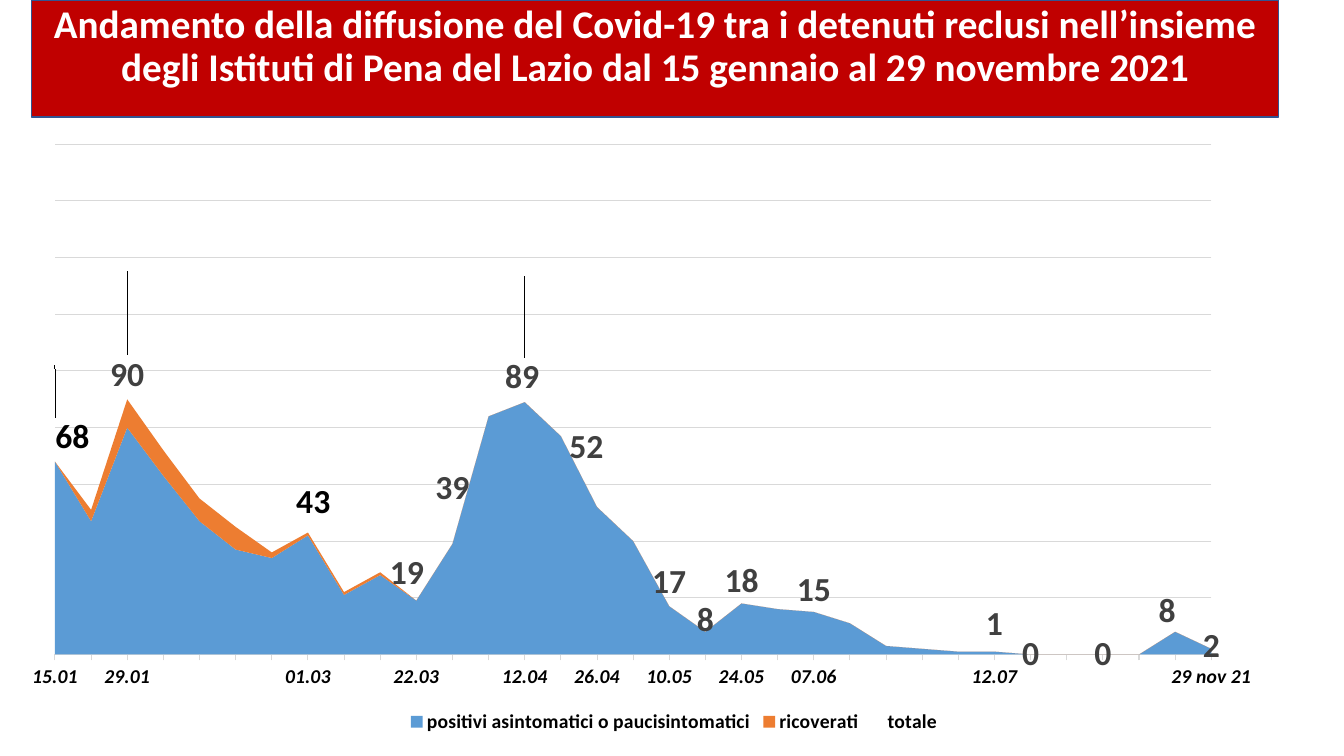
import pptx
import pptx.chart.data
import pptx.dml.color
import pptx.enum.chart
import pptx.enum.text
import pptx.oxml
import pptx.oxml.ns
import pptx.util
from pptx.util import Inches

COLORS = {
    "banner": "C00000",
    "banner_line": "325491",
    "white": "FFFFFF",
    "black": "000000",
    "label": "404040",
    "grid": "D9D9D9",
    "positive": "5B9BD5",
    "hospital": "ED7D31",
}
FONT = "Calibri"
TITLE = (
    "Andamento della diffusione del Covid-19 tra i detenuti reclusi nell’insieme "
    "degli Istituti di Pena del Lazio dal 15 gennaio al 29 novembre 2021"
)
WEEKS = 33
DATES = {
    0: "15.01", 2: "29.01", 7: "01.03", 10: "22.03", 13: "12.04", 15: "26.04",
    17: "10.05", 19: "24.05", 21: "07.06", 26: "12.07", 32: "29 nov 21",
}
POSITIVE = [
    68, 47, 80, 63, 47, 37, 34, 42, 21, 28, 19, 39, 84, 89, 77, 52, 40,
    17, 8, 18, 16, 15, 11, 3, 2, 1, 1, 0, 0, 0, 0, 8, 2,
]
HOSPITAL = [0, 4, 10, 9, 8, 8, 2, 1, 1, 1, 0, 0]
HOSPITAL += [None] * (WEEKS - len(HOSPITAL))
TOTAL = [positive + (hospital or 0) for positive, hospital in zip(POSITIVE, HOSPITAL)]
LABEL_OFFSETS = {
    0: (0.013, 0.117), 2: (0, 0.167), 7: (0.004, 0.05), 10: (-0.007, 0),
    11: (0, 0), 13: (-0.002, 0.164), 15: (-0.008, 0.022), 17: (0, 0),
    18: (0, 0), 19: (0, 0.005), 21: (0, 0), 26: (0, -0.042), 27: (0, 0),
    29: (0, 0), 31: (-0.006, -0.015), 32: (0, 0),
}
BLACK_LABELS = (0, 7)


def rgb(name):
    return pptx.dml.color.RGBColor.from_string(COLORS[name])


def format_font(font, size, color, bold=True, italic=False):
    font.name = FONT
    font.size = pptx.util.Pt(size)
    font.bold = bold
    font.italic = italic
    font.color.rgb = rgb(color)


def format_line(line, color, width):
    line.color.rgb = rgb(color)
    line.width = pptx.util.Pt(width)


def write_text(shape, text, size, color, alignment, line_spacing):
    frame = shape.text_frame
    frame.word_wrap = True
    frame.auto_size = pptx.enum.text.MSO_AUTO_SIZE.NONE
    frame.vertical_anchor = pptx.enum.text.MSO_ANCHOR.TOP
    paragraph = frame.paragraphs[0]
    paragraph.alignment = alignment
    paragraph.line_spacing = line_spacing
    run = paragraph.add_run()
    run.text = text
    format_font(run.font, size, color)


def add_banner(slide):
    banner = slide.shapes.title
    banner.left, banner.top = Inches(0.31), Inches(0)
    banner.width, banner.height = Inches(12.37), Inches(1.16)
    banner.fill.solid()
    banner.fill.fore_color.rgb = rgb("banner")
    format_line(banner.line, "banner_line", 1)
    write_text(banner, TITLE, size=28, color="white",
               alignment=pptx.enum.text.PP_ALIGN.CENTER, line_spacing=0.9)


def layout_element(x, y, size=None):
    names = pptx.oxml.ns.nsdecls("c")
    mode = '<c:xMode val="edge"/><c:yMode val="edge"/>' if size else ""
    target = '<c:layoutTarget val="inner"/>' if size else ""
    extent = f'<c:w val="{size[0]}"/><c:h val="{size[1]}"/>' if size else ""
    return pptx.oxml.parse_xml(
        f"<c:layout {names}><c:manualLayout>{target}{mode}"
        f'<c:x val="{x}"/><c:y val="{y}"/>{extent}</c:manualLayout></c:layout>'
    )


def place_plot(chart):
    plot_area = chart._chartSpace.chart.plotArea
    for layout in plot_area.xpath("c:layout"):
        plot_area.remove(layout)
    plot_area.insert(0, layout_element(0.038, 0.044, (0.863, 0.822)))


def label_totals(series):
    labels = series.data_labels
    labels.show_value = True
    format_font(labels.font, 24, "label")
    for index in range(WEEKS):
        color = "black" if index in BLACK_LABELS else "label"
        format_font(series.points[index].data_label.font, 24, color)
        label = series._element.xpath(f'c:dLbls/c:dLbl[c:idx/@val="{index}"]')[0]
        if index in LABEL_OFFSETS:
            label.insert(1, layout_element(*LABEL_OFFSETS[index]))
        else:
            for child in list(label)[1:]:
                label.remove(child)
            names = pptx.oxml.ns.nsdecls("c")
            label.append(pptx.oxml.parse_xml(f'<c:delete {names} val="1"/>'))


def format_axes(chart):
    dates = chart.category_axis
    dates.major_tick_mark = pptx.enum.chart.XL_TICK_MARK.OUTSIDE
    dates.has_major_gridlines = False
    format_font(dates.tick_labels.font, 14, "black", italic=True)
    format_line(dates.format.line, "grid", 0.75)
    skip = pptx.oxml.parse_xml(
        f'<c:tickLblSkip {pptx.oxml.ns.nsdecls("c")} val="1"/>')
    dates._element.xpath("c:noMultiLvlLbl")[0].addprevious(skip)

    values = chart.value_axis
    values.visible = False
    values.minimum_scale, values.maximum_scale = 0, 180
    values.major_unit = 20
    values.has_major_gridlines = True
    format_line(values.major_gridlines.format.line, "grid", 0.75)
    for crossing in values._element.xpath("c:crossBetween"):
        values._element.remove(crossing)
    between = pptx.oxml.parse_xml(
        f'<c:crossBetween {pptx.oxml.ns.nsdecls("c")} val="midCat"/>')
    values._element.xpath("c:majorUnit")[0].addprevious(between)


def add_trend_chart(slide):
    data = pptx.chart.data.CategoryChartData()
    data.categories = [DATES.get(week, "") for week in range(WEEKS)]
    data.add_series("positivi asintomatici o paucisintomatici", POSITIVE)
    data.add_series("ricoverati", HOSPITAL)
    data.add_series("totale", TOTAL)
    chart = slide.shapes.add_chart(
        pptx.enum.chart.XL_CHART_TYPE.AREA_STACKED,
        Inches(0.04), Inches(1.16), Inches(13.29), Inches(6.16), data,
    ).chart
    chart.has_title = False
    format_font(chart.font, 10, "black", bold=False)
    positive, hospital, total = chart.plots[0].series
    for series, color in ((positive, "positive"), (hospital, "hospital")):
        series.format.fill.solid()
        series.format.fill.fore_color.rgb = rgb(color)
    total.format.fill.background()
    total.format.line.fill.background()
    label_totals(total)
    format_axes(chart)
    place_plot(chart)
    chart.has_legend = True
    chart.legend.position = pptx.enum.chart.XL_LEGEND_POSITION.BOTTOM
    chart.legend.include_in_layout = False
    format_font(chart.legend.font, 14, "black")


def main():
    presentation = pptx.Presentation()
    presentation.slide_width = Inches(13.33)
    presentation.slide_height = Inches(7.5)
    slide = presentation.slides.add_slide(presentation.slide_layouts[5])
    add_banner(slide)
    add_trend_chart(slide)
    presentation.save("out.pptx")


if __name__ == "__main__":
    main()
